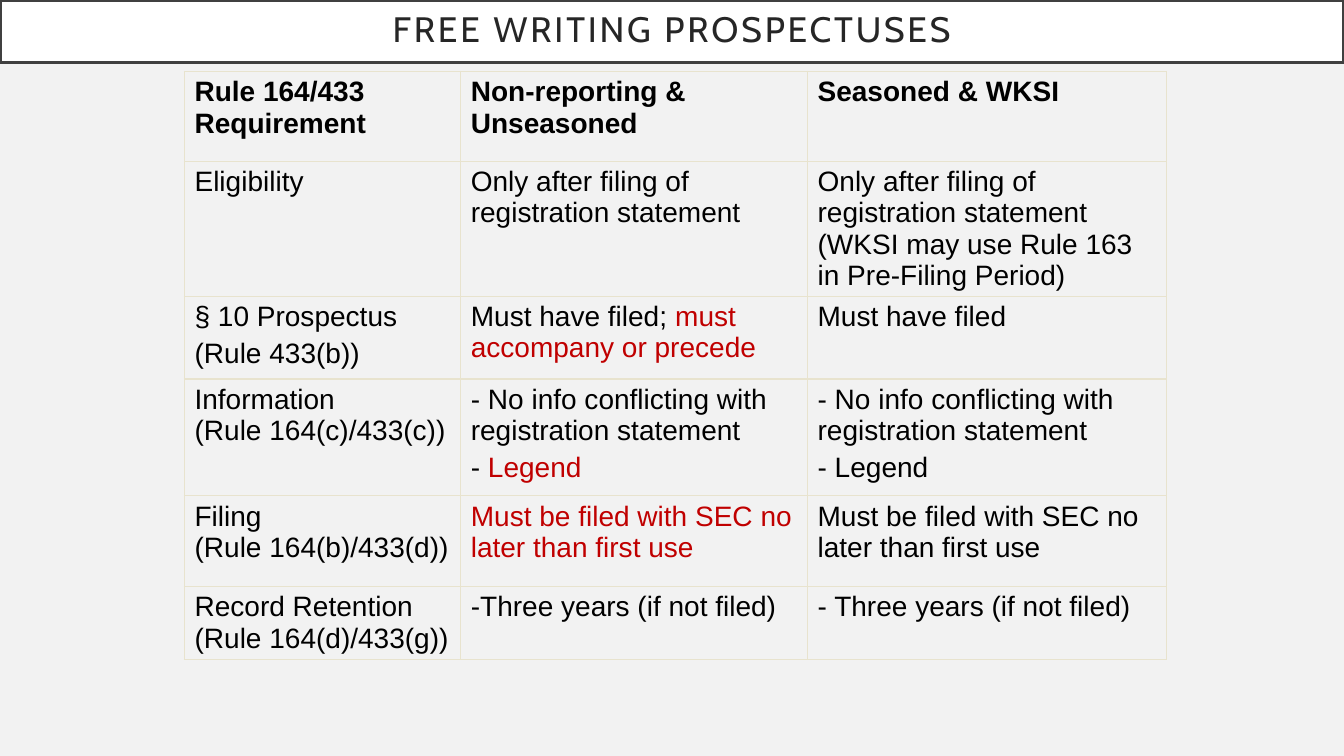
import pptx
import pptx.dml.color
import pptx.enum.text
import pptx.oxml
import pptx.oxml.ns
import pptx.util
from pptx.util import Inches

WHITE = pptx.dml.color.RGBColor(0xFF, 0xFF, 0xFF)
BLACK = pptx.dml.color.RGBColor(0x00, 0x00, 0x00)
RED = pptx.dml.color.RGBColor(0xC0, 0x00, 0x00)
PALE_GREY = pptx.dml.color.RGBColor(0xF2, 0xF2, 0xF2)
DARK_GREY = pptx.dml.color.RGBColor(0x40, 0x40, 0x40)
TITLE_GREY = pptx.dml.color.RGBColor(0x26, 0x26, 0x26)
BORDER_CREAM = pptx.dml.color.RGBColor(0xE8, 0xE3, 0xCE)

COLUMN_WIDTHS = [2.74, 3.44, 3.56]

# Row height, gap in points between label lines, cell texts.
# A line feed starts a paragraph; text after a bar is red.
ROWS = [
    (0.89, 0, ["Rule 164/433 Requirement", "Non-reporting & Unseasoned", "Seasoned & WKSI"]),
    (0.92, 0, ["Eligibility",
               "Only after filing of registration statement",
               "Only after filing of registration statement (WKSI may use Rule 163 in Pre-Filing Period)"]),
    (0.82, 4, ["§ 10 Prospectus\n(Rule 433(b))",
               "Must have filed; |must accompany or precede",
               "Must have filed"]),
    (1.16, 0, ["Information\n(Rule 164(c)/433(c))",
               "- No info conflicting with registration statement\n- |Legend",
               "- No info conflicting with registration statement\n- Legend"]),
    (0.90, 0, ["Filing\n(Rule 164(b)/433(d))",
               "|Must be filed with SEC no later than first use",
               "Must be filed with SEC no later than first use"]),
    (0.70, 0, ["Record Retention\n(Rule 164(d)/433(g))",
               "-Three years (if not filed)",
               "- Three years (if not filed)"]),
]


def add_text(para, text, font="Arial", size=20, color=BLACK, bold=False, spacing=0):
    span = para.add_run()
    span.text = text
    span.font.name = font
    span.font.size = pptx.util.Pt(size)
    span.font.color.rgb = color
    span.font.bold = bold
    if spacing:
        span._r.get_or_add_rPr().set("spc", str(spacing * 100))


def set_borders(cell, color, width):
    properties = cell._tc.get_or_add_tcPr()
    for position, side in enumerate(["lnL", "lnR", "lnT", "lnB"]):
        properties.insert(position, pptx.oxml.parse_xml(
            f'<a:{side} {pptx.oxml.ns.nsdecls("a")} w="{pptx.util.Pt(width)}">'
            f'<a:solidFill><a:srgbClr val="{color}"/></a:solidFill></a:{side}>'))


# Page
deck = pptx.Presentation()
deck.slide_width = Inches(13.33)
deck.slide_height = Inches(7.5)
page = deck.slides.add_slide(deck.slide_layouts[5])
page.background.fill.solid()
page.background.fill.fore_color.rgb = PALE_GREY

# Title banner
title = page.shapes.title
title.left, title.top = Inches(0), Inches(0)
title.width, title.height = Inches(13.33), Inches(0.62)
title.fill.solid()
title.fill.fore_color.rgb = WHITE
title.line.color.rgb = DARK_GREY
title.line.width = pptx.util.Pt(2.5)
frame = title.text_frame
frame.auto_size = pptx.enum.text.MSO_AUTO_SIZE.NONE
frame.word_wrap = True
frame.vertical_anchor = pptx.enum.text.MSO_ANCHOR.MIDDLE
frame.margin_left = frame.margin_right = Inches(0.2)
frame.margin_top = frame.margin_bottom = Inches(0.2)
heading = frame.paragraphs[0]
heading.alignment = pptx.enum.text.PP_ALIGN.CENTER
heading.line_spacing = 0.9
add_text(heading, "FREE WRITING PROSPECTUSES", font="Cabin", size=25.2,
         color=TITLE_GREY, spacing=2)

# Requirements table
table_height = sum(height for height, label_gap, texts in ROWS)
table = page.shapes.add_table(
    len(ROWS), len(COLUMN_WIDTHS), Inches(1.83), Inches(0.71),
    Inches(sum(COLUMN_WIDTHS)), Inches(table_height)).table
table.horz_banding = False
for column, width in zip(table.columns, COLUMN_WIDTHS):
    column.width = Inches(width)

for row_index, (height, label_gap, texts) in enumerate(ROWS):
    table.rows[row_index].height = Inches(height)
    for column_index, text in enumerate(texts):
        cell = table.cell(row_index, column_index)
        cell.fill.background()
        set_borders(cell, BORDER_CREAM, 1)
        for line_index, line in enumerate(text.split("\n")):
            if line_index == 0:
                para = cell.text_frame.paragraphs[0]
            else:
                para = cell.text_frame.add_paragraph()
                para.space_before = pptx.util.Pt(label_gap if column_index == 0 else 4)
            for color, part in zip([BLACK, RED], line.split("|")):
                if part:
                    add_text(para, part, color=color, bold=row_index == 0)

deck.save("out.pptx")
